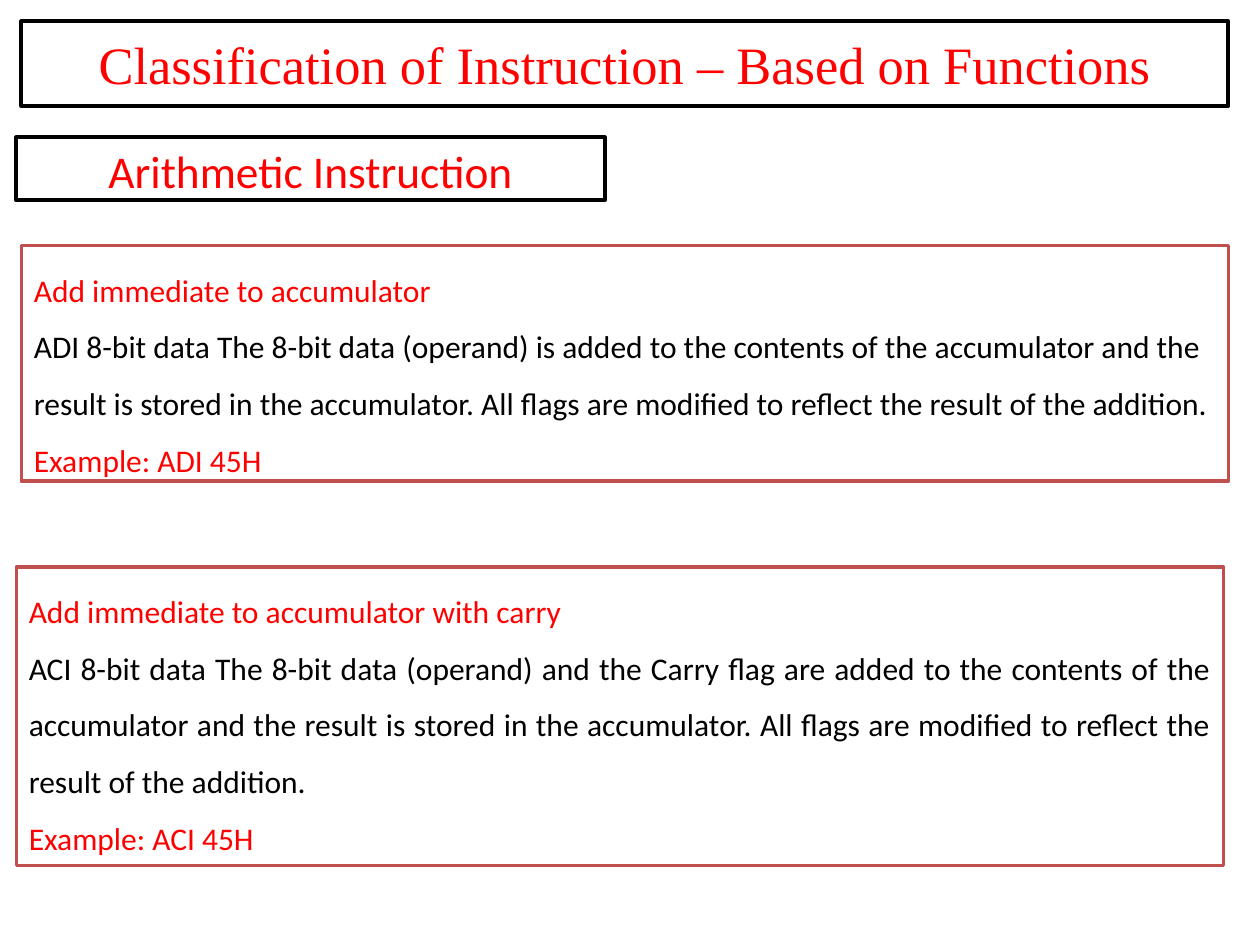
from pptx import Presentation
from pptx.dml.color import RGBColor
from pptx.enum.shapes import MSO_SHAPE as Shape
from pptx.enum.text import MSO_ANCHOR as Anchor, MSO_AUTO_SIZE as AutoSize, PP_ALIGN as Align
from pptx.util import Inches, Pt

RED = RGBColor(255, 0, 0)
BLACK = RGBColor(0, 0, 0)
WHITE = RGBColor(255, 255, 255)
BRICK = RGBColor(0xC0, 0x50, 0x4D)

TITLE = "Classification of Instruction – Based on Functions"
SUBTITLE = "Arithmetic Instruction"
CARDS = [
    ((0.17, 1.95, 9.58, 1.87), Align.LEFT, [
        ("Add immediate to accumulator", RED),
        ("ADI 8-bit data The 8-bit data (operand) is added to the contents of the "
         "accumulator and the result is stored in the accumulator. All flags are "
         "modified to reflect the result of the addition.", BLACK),
        ("Example: ADI 45H", RED),
    ]),
    ((0.13, 4.5, 9.58, 2.37), Align.JUSTIFY, [
        ("Add immediate to accumulator with carry", RED),
        ("ACI 8-bit data The 8-bit data (operand) and the Carry flag are added to the "
         "contents of the accumulator and the result is stored in the accumulator. All "
         "flags are modified to reflect the result of the addition.", BLACK),
        ("Example: ACI 45H", RED),
    ]),
]


def place(box, area):
    box.left, box.top, box.width, box.height = map(Inches, area)


def outline(box, color, width):
    box.line.color.rgb = color
    box.line.width = Pt(width)


def add_box(page, area):
    box = page.shapes.add_shape(Shape.RECTANGLE, *map(Inches, area))
    box.shadow.inherit = False
    return box


def write(box, lines, size, font, align, anchor=Anchor.TOP, spacing=1.0, fit=AutoSize.NONE):
    frame = box.text_frame
    frame.word_wrap = True
    frame.auto_size = fit
    frame.vertical_anchor = anchor
    for index, (text, color) in enumerate(lines):
        para = frame.add_paragraph() if index else frame.paragraphs[0]
        para.alignment = align
        para.line_spacing = spacing
        para.space_before = Pt(0)
        span = para.add_run()
        span.text = text
        span.font.name = font
        span.font.size = Pt(size)
        span.font.color.rgb = color


def main():
    deck = Presentation()
    deck.slide_width, deck.slide_height = Inches(10), Inches(7.5)
    page = deck.slides.add_slide(deck.slide_layouts[5])

    title = page.shapes.title
    place(title, (0.17, 0.17, 9.58, 0.67))
    outline(title, BLACK, 2.25)
    write(title, [(TITLE, RED)], 30, "Times New Roman", Align.CENTER, Anchor.MIDDLE)

    subtitle = add_box(page, (0.13, 1.09, 4.67, 0.5))
    subtitle.fill.background()
    outline(subtitle, BLACK, 2.25)
    write(subtitle, [(SUBTITLE, RED)], 25.9, "Calibri", Align.CENTER)

    for area, align, lines in CARDS:
        card = add_box(page, area)
        card.fill.solid()
        card.fill.fore_color.rgb = WHITE
        outline(card, BRICK, 2)
        write(card, lines, 18, "Calibri", align, spacing=1.5, fit=AutoSize.SHAPE_TO_FIT_TEXT)

    deck.save("out.pptx")


if __name__ == "__main__":
    main()
